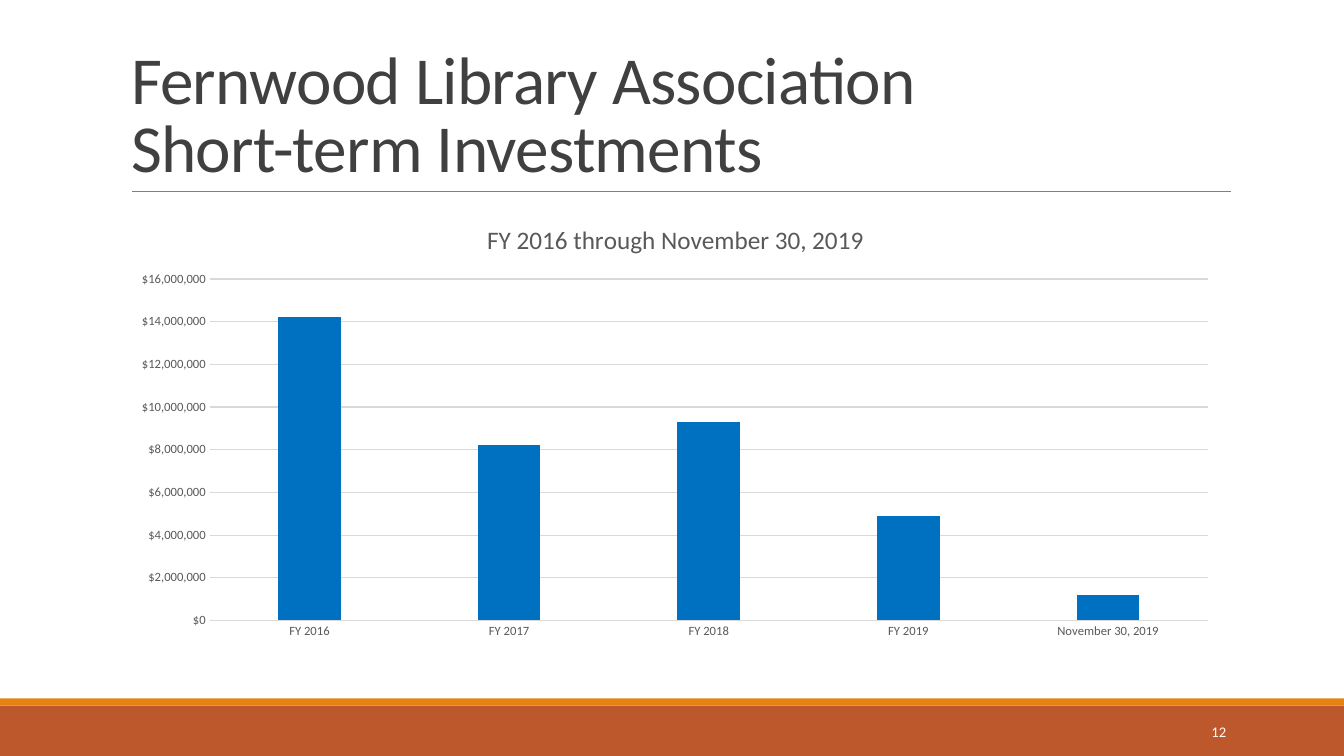
import pptx
import pptx.chart.data
import pptx.dml.color
import pptx.enum.chart
import pptx.enum.shapes
import pptx.enum.text
import pptx.oxml
import pptx.oxml.ns
import pptx.util
from dataclasses import dataclass
from pptx.util import Inches


@dataclass(frozen=True)
class Theme:
    font: str = "Calibri"
    title_color: str = "404040"
    chart_color: str = "595959"
    grid_color: str = "D9D9D9"
    bar_color: str = "0070C0"
    rule_color: str = "808080"
    footer_color: str = "BD582C"
    accent_color: str = "E48312"
    white: str = "FFFFFF"
    title_size: float = 48
    chart_title_size: float = 18
    axis_size: float = 9
    number_size: float = 10.5


THEME = Theme()
ALIGN = pptx.enum.text.PP_ALIGN
ANCHOR = pptx.enum.text.MSO_ANCHOR
INVESTMENTS = {
    "FY 2016": 14200000,
    "FY 2017": 8200000,
    "FY 2018": 9300000,
    "FY 2019": 4900000,
    "November 30, 2019": 1200000,
}


def rgb(color):
    return pptx.dml.color.RGBColor.from_string(color)


def format_font(font, size, color):
    font.name = THEME.font
    font.size = pptx.util.Pt(size)
    font.bold = False
    font.color.rgb = rgb(color)


def write_text(frame, text, size, color, align=ALIGN.LEFT, anchor=None,
               line_spacing=None, tracking=None):
    frame.text = text
    frame.word_wrap = True
    if anchor is not None:
        frame.vertical_anchor = anchor
    paragraph = frame.paragraphs[0]
    paragraph.alignment = align
    paragraph.line_spacing = line_spacing
    for run in paragraph.runs:
        format_font(run.font, size, color)
        if tracking is not None:
            run.font._element.set("spc", str(round(tracking * 100)))


def add_band(slide, top, height, color):
    shape = slide.shapes.add_shape(
        pptx.enum.shapes.MSO_SHAPE.RECTANGLE,
        0, Inches(top), Inches(13.33), Inches(height))
    shape.shadow.inherit = False
    shape.fill.solid()
    shape.fill.fore_color.rgb = rgb(color)
    shape.line.fill.background()


def add_rule(slide, left, right, top):
    connector = slide.shapes.add_connector(
        pptx.enum.shapes.MSO_CONNECTOR.STRAIGHT,
        Inches(left), Inches(top), Inches(right), Inches(top))
    connector.line.color.rgb = rgb(THEME.rule_color)
    connector.line.width = pptx.util.Pt(0.5)
    properties = connector._element.spPr
    properties.append(pptx.oxml.parse_xml(
        f'<a:effectLst {pptx.oxml.ns.nsdecls("a")}/>'))


def add_title(slide, text):
    title = slide.shapes.title
    title.left, title.top = Inches(1.2), Inches(0.31)
    title.width, title.height = Inches(11), Inches(1.59)
    title.text_frame.auto_size = pptx.enum.text.MSO_AUTO_SIZE.NONE
    write_text(title.text_frame, text, THEME.title_size, THEME.title_color,
               anchor=ANCHOR.BOTTOM, line_spacing=0.85, tracking=-0.5)


def add_page_number(slide, number):
    box = slide.shapes.add_textbox(
        Inches(10.83), Inches(7.06), Inches(1.43), Inches(0.4))
    write_text(box.text_frame, number, THEME.number_size, THEME.white,
               align=ALIGN.RIGHT, anchor=ANCHOR.MIDDLE)


def format_axis(axis):
    axis.major_tick_mark = pptx.enum.chart.XL_TICK_MARK.NONE
    axis.minor_tick_mark = pptx.enum.chart.XL_TICK_MARK.NONE
    format_font(axis.tick_labels.font, THEME.axis_size, THEME.chart_color)


def format_grid_line(line):
    line.color.rgb = rgb(THEME.grid_color)
    line.width = pptx.util.Pt(0.75)


def place_plot(chart, x, y, w, h):
    """Fix the inner plot area as fractions of the chart."""
    plot_area = chart._chartSpace.chart.plotArea
    for layout in plot_area.findall(pptx.oxml.ns.qn("c:layout")):
        plot_area.remove(layout)
    sizes = "".join(f'<c:{key} val="{value}"/>' for key, value in
                    (("x", x), ("y", y), ("w", w), ("h", h)))
    plot_area.insert(0, pptx.oxml.parse_xml(
        f'<c:layout {pptx.oxml.ns.nsdecls("c")}><c:manualLayout>'
        '<c:layoutTarget val="inner"/><c:xMode val="edge"/>'
        f'<c:yMode val="edge"/>{sizes}</c:manualLayout></c:layout>'))


def add_investment_chart(slide, title, values):
    data = pptx.chart.data.CategoryChartData(number_format='"$"#,##0')
    data.categories = list(values)
    data.add_series("Series 1", list(values.values()))
    chart = slide.shapes.add_chart(
        pptx.enum.chart.XL_CHART_TYPE.COLUMN_CLUSTERED,
        Inches(1.2), Inches(2.02), Inches(11), Inches(4.4), data).chart
    chart.has_legend = False
    chart.font.name = THEME.font
    chart.font.size = pptx.util.Pt(10)

    chart.has_title = True
    write_text(chart.chart_title.text_frame, title, THEME.chart_title_size,
               THEME.chart_color, align=ALIGN.CENTER)
    chart.chart_title.include_in_layout = False

    # Columns
    plot = chart.plots[0]
    plot.gap_width = 219
    plot.overlap = -27
    plot.vary_by_categories = False
    fill = plot.series[0].format.fill
    fill.solid()
    fill.fore_color.rgb = rgb(THEME.bar_color)

    # Axes
    format_axis(chart.category_axis)
    format_grid_line(chart.category_axis.format.line)
    value_axis = chart.value_axis
    format_axis(value_axis)
    value_axis.minimum_scale = 0
    value_axis.maximum_scale = 16000000
    value_axis.major_unit = 2000000
    value_axis.tick_labels.number_format = '"$"#,##0'
    value_axis.tick_labels.number_format_is_linked = False
    value_axis.format.line.fill.background()
    format_grid_line(value_axis.major_gridlines.format.line)
    place_plot(chart, 0.08, 0.17, 0.9, 0.77)


def main():
    presentation = pptx.Presentation()
    presentation.slide_width = Inches(13.33)
    presentation.slide_height = Inches(7.5)
    slide = presentation.slides.add_slide(presentation.slide_layouts[5])

    # Footer bands and title rule
    add_band(slide, 7, 0.5, THEME.footer_color)
    add_band(slide, 6.93, 0.07, THEME.accent_color)
    add_rule(slide, 1.31, 12.21, 1.9)

    # Content
    add_title(slide, "Fernwood Library Association\vShort-term Investments")
    add_page_number(slide, "12")
    add_investment_chart(slide, "FY 2016 through November 30, 2019", INVESTMENTS)
    presentation.save("out.pptx")


if __name__ == "__main__":
    main()
